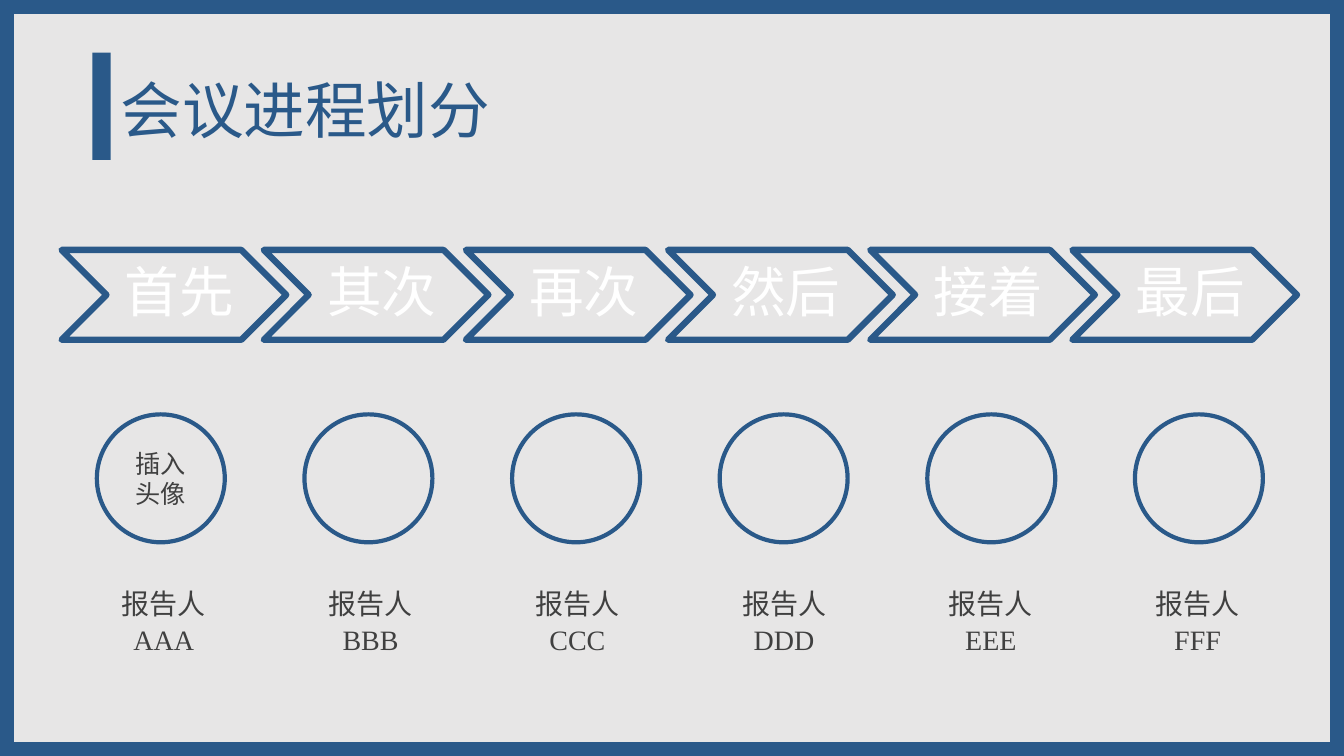
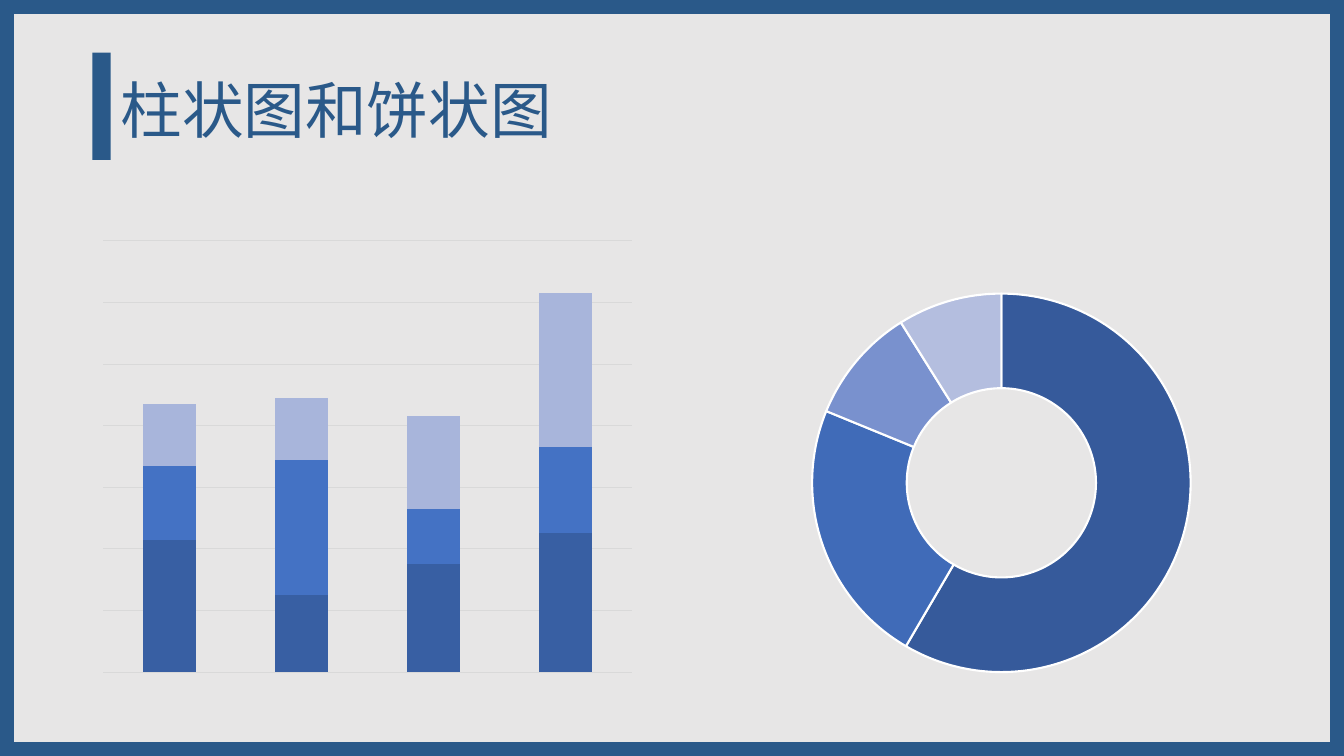
"""Build two framed slides: a meeting agenda and a pair of charts."""
from lxml.etree import SubElement
from pptx import Presentation
from pptx.chart.data import CategoryChartData
from pptx.dml.color import RGBColor
from pptx.enum.chart import XL_CHART_TYPE
from pptx.enum.shapes import MSO_SHAPE
from pptx.enum.text import MSO_ANCHOR, PP_ALIGN
from pptx.oxml.ns import qn
from pptx.util import Pt

BLUE, GREY, WHITE, GRID = "2A5989", "404040", "FFFFFF", "D9D9D9"
BACKGROUND = "E7E6E6"
CJK = "Noto Sans CJK SC"
NO_STYLE = "{2D5ABB26-0587-4C30-8999-92F81FD0307C}"
WIDTH, HEIGHT = 960, 540


def paint(color_owner, color):
    """Apply a hex colour to a fill, or to the fill of a line or font."""
    fill = getattr(color_owner, "fill", color_owner)
    fill.solid()
    fill.fore_color.rgb = RGBColor.from_string(color)


def write(tf, text, size, font, color, align=PP_ALIGN.CENTER):
    """Put one styled paragraph in a text frame."""
    tf.word_wrap = True
    p = tf.paragraphs[0]
    p.text = text
    p.alignment = align
    p.font.size = Pt(size)
    p.font.name = font
    paint(p.font, color)
    SubElement(p._p.pPr.find(qn("a:defRPr")), qn("a:ea"), typeface=CJK)
    return p


prs = Presentation()
prs.slide_width, prs.slide_height = Pt(WIDTH), Pt(HEIGHT)
paint(prs.slide_master.background, BACKGROUND)

slides = []
for title in ("会议进程划分", "柱状图和饼状图"):
    s = prs.slides.add_slide(prs.slide_layouts[6])
    frame = s.shapes.add_shape(MSO_SHAPE.RECTANGLE, 0, 0, Pt(WIDTH), Pt(HEIGHT))
    frame.shadow.inherit = False
    frame.fill.background()
    paint(frame.line, BLUE)
    frame.line.width = Pt(20)
    bar = s.shapes.add_shape(MSO_SHAPE.RECTANGLE, Pt(66), Pt(37.6), Pt(13), Pt(76.6))
    bar.shadow.inherit = False
    paint(bar, BLUE)
    bar.line.fill.background()
    tf = s.shapes.add_textbox(Pt(79), Pt(28.8), Pt(815), Pt(104.4)).text_frame
    tf.vertical_anchor = MSO_ANCHOR.MIDDLE
    write(tf, title, 44, CJK, BLUE, PP_ALIGN.LEFT).line_spacing = 0.9
    slides.append(s)
agenda, charts = slides

steps = ["首先", "其次", "再次", "然后", "接着", "最后"]
speakers = ["AAA", "BBB", "CCC", "DDD", "EEE", "FFF"]

for i, step in enumerate(steps):
    chevron = agenda.shapes.add_shape(
        MSO_SHAPE.CHEVRON, Pt(44 + 144.4 * i), Pt(178.5), Pt(160.5), Pt(64.2))
    circle = agenda.shapes.add_shape(
        MSO_SHAPE.OVAL, Pt(69.2 + 148.3 * i), Pt(296), Pt(91.4), Pt(91.4))
    for sp, weight in ((chevron, 4.5), (circle, 3)):
        sp.shadow.inherit = False
        sp.fill.background()
        paint(sp.line, BLUE)
        sp.line.width = Pt(weight)
    tf = chevron.text_frame
    tf.margin_left = Pt(12)
    tf.margin_right = tf.margin_top = tf.margin_bottom = Pt(4)
    write(tf, step, 39, CJK, WHITE).line_spacing = 0.9
    if i == 0:
        write(circle.text_frame, "插入头像", 18, "Calibri", GREY)

table = agenda.shapes.add_table(
    2, len(speakers), Pt(43.2), Pt(411.8), Pt(886.2), Pt(62.6)).table
table.first_row = table.horz_banding = False
table._tbl.tblPr.find(qn("a:tableStyleId")).text = NO_STYLE
for col, speaker in enumerate(speakers):
    for row, text in enumerate(("报告人", speaker)):
        cell = table.cell(row, col)
        cell.fill.background()
        write(cell.text_frame, text, 20, "Times New Roman", GREY)

stacks = [("Series 1", (86, 50, 70, 90), "385FA3"),
          ("Series 2", (48, 88, 36, 56), "4472C4"),
          ("Series 3", (40, 40, 60, 100), "A8B5DB")]
data = CategoryChartData()
data.categories = ["1", "2", "3", "4"]
for name, values, color in stacks:
    data.add_series(name, values)
column = charts.shapes.add_chart(
    XL_CHART_TYPE.COLUMN_STACKED, Pt(66), Pt(165.6), Pt(393), Pt(321), data).chart
plot = column.plots[0]
plot.gap_width, plot.overlap = 150, 100
for series, (name, values, color) in zip(plot.series, stacks):
    paint(series.format, color)
column.category_axis.visible = False
axis = column.value_axis
axis.visible = False
axis.minimum_scale, axis.maximum_scale, axis.major_unit = 0, 280, 40
axis.has_major_gridlines = True
gridline = axis.major_gridlines.format.line
paint(gridline, GRID)
gridline.width = Pt(0.75)

data = CategoryChartData()
data.categories = ["1", "2", "3", "4"]
data.add_series("Series 1", (59, 23, 10, 9))
ring = charts.shapes.add_chart(
    XL_CHART_TYPE.DOUGHNUT, Pt(570.2), Pt(164.2), Pt(290.2), Pt(361.4), data).chart
ring._chartSpace.find(".//" + qn("c:holeSize")).set("val", "75")
for i, color in enumerate(("365A9B", "406BB8", "7991CE", "B4BEDF")):
    fmt = ring.plots[0].series[0].points[i].format
    paint(fmt, color)
    paint(fmt.line, WHITE)
    fmt.line.width = Pt(1.5)

for chart in (column, ring):
    chart.has_legend = chart.has_title = False
    chart.font.size = Pt(10)
    chart.font.name = "Calibri"
    paint(chart.font, "000000")

prs.save("out.pptx")
